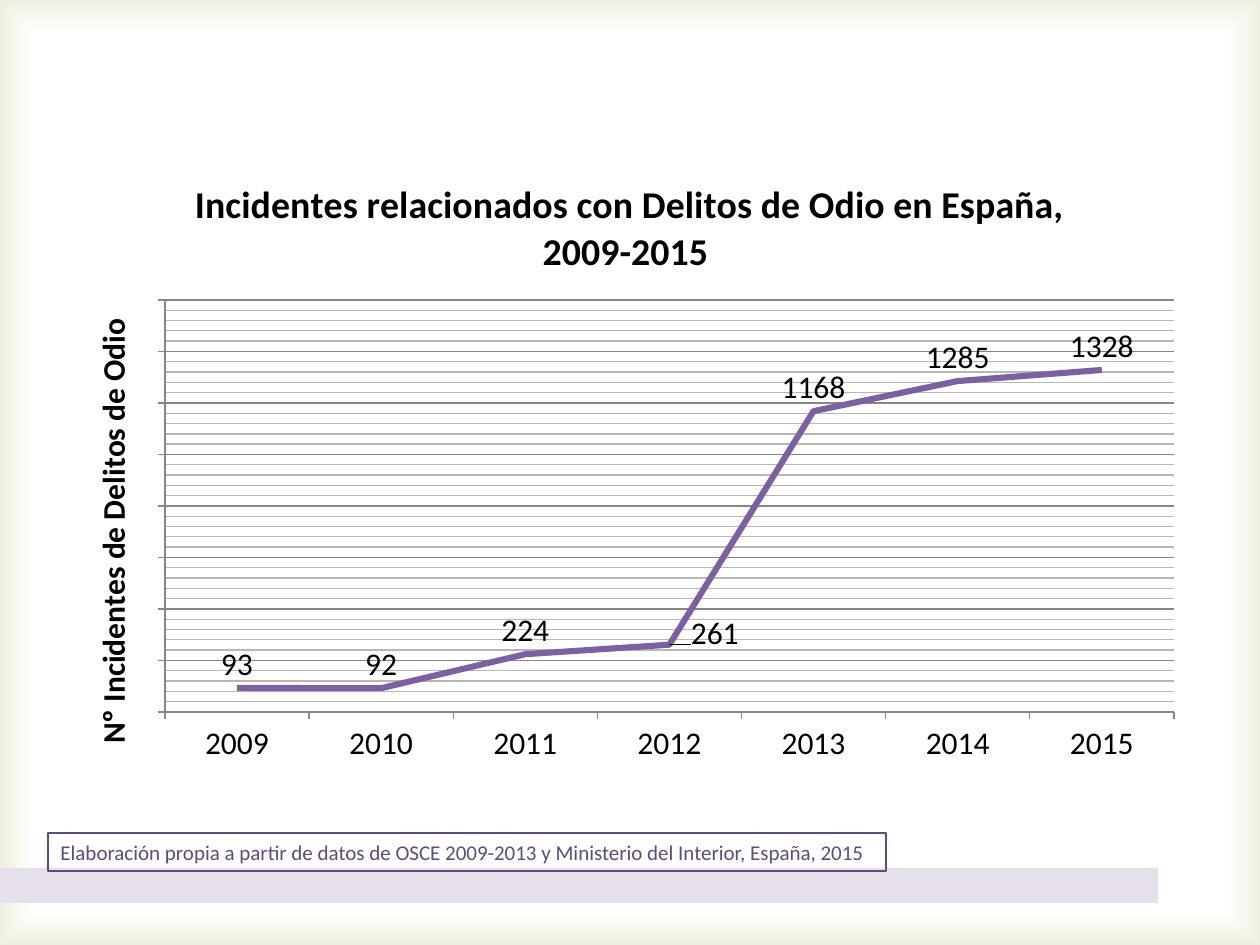
from dataclasses import dataclass

from lxml.etree import SubElement
from pptx import Presentation
from pptx.chart.data import CategoryChartData
from pptx.dml.color import RGBColor
from pptx.enum.chart import XL_CHART_TYPE, XL_LABEL_POSITION, XL_TICK_LABEL_POSITION, XL_TICK_MARK
from pptx.enum.shapes import MSO_SHAPE
from pptx.enum.text import MSO_ANCHOR, MSO_AUTO_SIZE, PP_ALIGN
from pptx.oxml import parse_xml
from pptx.oxml.ns import nsdecls, qn
from pptx.util import Emu, Pt

PIXELS_PER_INCH = 126


@dataclass(frozen=True)
class Theme:
    font: str = "Calibri"
    text: str = "000000"
    paper: str = "FFFFFF"
    edge: str = "EBF1DE"
    band: str = "E6E0EC"
    source: str = "604A7B"
    series: str = "7D60A0"
    axis: str = "868686"
    minor_grid: str = "B7B7B7"
    title_size: float = 21.6
    chart_size: float = 18
    source_size: float = 12


@dataclass(frozen=True)
class Box:
    left: int
    top: int
    width: int
    height: int

    def emu(self) -> tuple:
        return tuple(px(n) for n in (self.left, self.top, self.width, self.height))


THEME = Theme()
YEARS = [str(year) for year in range(2009, 2016)]
INCIDENTS = [93, 92, 224, 261, 1168, 1285, 1328]
CHART_BOX = Box(63, 151, 1134, 624)
PLOT_BOX = Box(165, 300, 1009, 412)


def px(length: int) -> Emu:
    return Emu(round(length * 914400 / PIXELS_PER_INCH))


def color(value: str) -> RGBColor:
    return RGBColor.from_string(value)


def format_font(font, size: float, value: str = THEME.text, bold: bool = False) -> None:
    font.name, font.size, font.bold = THEME.font, Pt(size), bold
    font.color.rgb = color(value)


def write_text(frame, text: str, *, size: float, value: str = THEME.text,
               bold: bool = False, align=None) -> None:
    paragraph = frame.paragraphs[0]
    if align is not None:
        paragraph.alignment = align
    run = paragraph.add_run()
    run.text = text
    format_font(run.font, size, value, bold)


def format_line(line, value: str, width: float) -> None:
    line.color.rgb = color(value)
    line.width = Pt(width)


def add_rectangle(slide, box: Box, fill: str = "", line: str = ""):
    shape = slide.shapes.add_shape(MSO_SHAPE.RECTANGLE, *box.emu())
    shape.shadow.inherit = False
    if fill:
        shape.fill.solid()
        shape.fill.fore_color.rgb = color(fill)
    else:
        shape.fill.background()
    if line:
        format_line(shape.line, line, 0.75)
    else:
        shape.line.fill.background()
    return shape


def manual_layout(inner: bool = False, **values: float):
    """Chart layout with positions as fractions of the chart area."""
    layout = parse_xml(f"<c:layout {nsdecls('c')}><c:manualLayout/></c:layout>")
    settings = {"layoutTarget": "inner", "xMode": "edge", "yMode": "edge"} if inner else {}
    for name, value in {**settings, **values}.items():
        SubElement(layout[0], qn(f"c:{name}")).set("val", str(value))
    return layout


def paint_background(slide) -> None:
    fill = slide.background.fill
    fill.gradient()
    for stop, position, value in zip(fill.gradient_stops, (0.93, 1), (THEME.paper, THEME.edge)):
        stop.position = position
        stop.color.rgb = color(value)
    gradient = slide.element.find(".//" + qn("a:gradFill"))
    gradient.replace(gradient.find(qn("a:lin")), parse_xml(
        f'<a:path {nsdecls("a")} path="rect">'
        '<a:fillToRect l="50000" t="50000" r="50000" b="50000"/></a:path>'))


def add_incident_chart(slide) -> None:
    data = CategoryChartData()
    data.categories = YEARS
    data.add_series("Series 1", INCIDENTS)
    chart = slide.shapes.add_chart(XL_CHART_TYPE.LINE, *CHART_BOX.emu(), data).chart
    chart_element = chart.element
    format_font(chart.font, THEME.chart_size)
    chart.has_legend = False
    chart.has_title = True
    write_text(chart.chart_title.text_frame,
               "Incidentes relacionados con Delitos de Odio en España, 2009-2015 ",
               size=THEME.title_size, bold=True)
    chart.chart_title.include_in_layout = False

    # Axes and grid
    value_axis, category_axis = chart.value_axis, chart.category_axis
    for axis in (value_axis, category_axis):
        axis.major_tick_mark = XL_TICK_MARK.OUTSIDE
        axis.minor_tick_mark = XL_TICK_MARK.NONE
        format_line(axis.format.line, THEME.axis, 0.75)
    value_axis.minimum_scale, value_axis.maximum_scale = 0, 1600
    value_axis.major_unit, value_axis.minor_unit = 200, 40
    value_axis.tick_label_position = XL_TICK_LABEL_POSITION.NONE
    value_axis.has_major_gridlines = value_axis.has_minor_gridlines = True
    format_line(value_axis.major_gridlines.format.line, THEME.axis, 0.75)
    chart_element.find(".//" + qn("c:minorGridlines")).append(parse_xml(
        f'<c:spPr {nsdecls("c", "a")}><a:ln w="{Pt(0.75)}"><a:solidFill>'
        f'<a:srgbClr val="{THEME.minor_grid}"/></a:solidFill></a:ln></c:spPr>'))
    value_axis.has_title = True
    write_text(value_axis.axis_title.text_frame, "Nº Incidentes de Delitos de Odio",
               size=THEME.chart_size, bold=True)

    # Plot area
    plot = chart.plots[0]
    plot.vary_by_categories = False
    plot_area = chart_element.find(".//" + qn("c:plotArea"))
    old_layout = plot_area.find(qn("c:layout"))
    if old_layout is not None:
        plot_area.remove(old_layout)
    plot_area.insert(0, manual_layout(
        inner=True,
        x=round((PLOT_BOX.left - CHART_BOX.left) / CHART_BOX.width, 4),
        y=round((PLOT_BOX.top - CHART_BOX.top) / CHART_BOX.height, 4),
        w=round(PLOT_BOX.width / CHART_BOX.width, 4),
        h=round(PLOT_BOX.height / CHART_BOX.height, 4)))

    # Line and value labels; the 2012 label moves clear of the line
    series = plot.series[0]
    series.smooth = False
    format_line(series.format.line, THEME.series, 3.5)
    labels = series.data_labels
    labels.show_value = True
    labels.position = XL_LABEL_POSITION.ABOVE
    format_font(labels.font, THEME.chart_size)
    moved_label = series.points[YEARS.index("2012")].data_label
    moved_label.position = XL_LABEL_POSITION.ABOVE
    format_font(moved_label.font, THEME.chart_size)
    chart_element.find(".//" + qn("c:dLbl")).insert(1, manual_layout(x=0.04, y=0.02))


def add_source_note(slide) -> None:
    note = add_rectangle(slide, Box(48, 833, 838, 38), line=THEME.source)
    frame = note.text_frame
    frame.word_wrap = False
    frame.auto_size = MSO_AUTO_SIZE.SHAPE_TO_FIT_TEXT
    frame.vertical_anchor = MSO_ANCHOR.TOP
    write_text(frame, "Elaboración propia a partir de datos de OSCE 2009-2013 y "
               "Ministerio del Interior, España, 2015",
               size=THEME.source_size, value=THEME.source, align=PP_ALIGN.LEFT)


def main() -> None:
    presentation = Presentation()
    presentation.slide_width, presentation.slide_height = px(1260), px(945)
    slide = presentation.slides.add_slide(presentation.slide_layouts[6])
    paint_background(slide)
    add_rectangle(slide, Box(0, 868, 1158, 35), fill=THEME.band)
    add_incident_chart(slide)
    add_source_note(slide)
    presentation.save("out.pptx")


if __name__ == "__main__":
    main()
